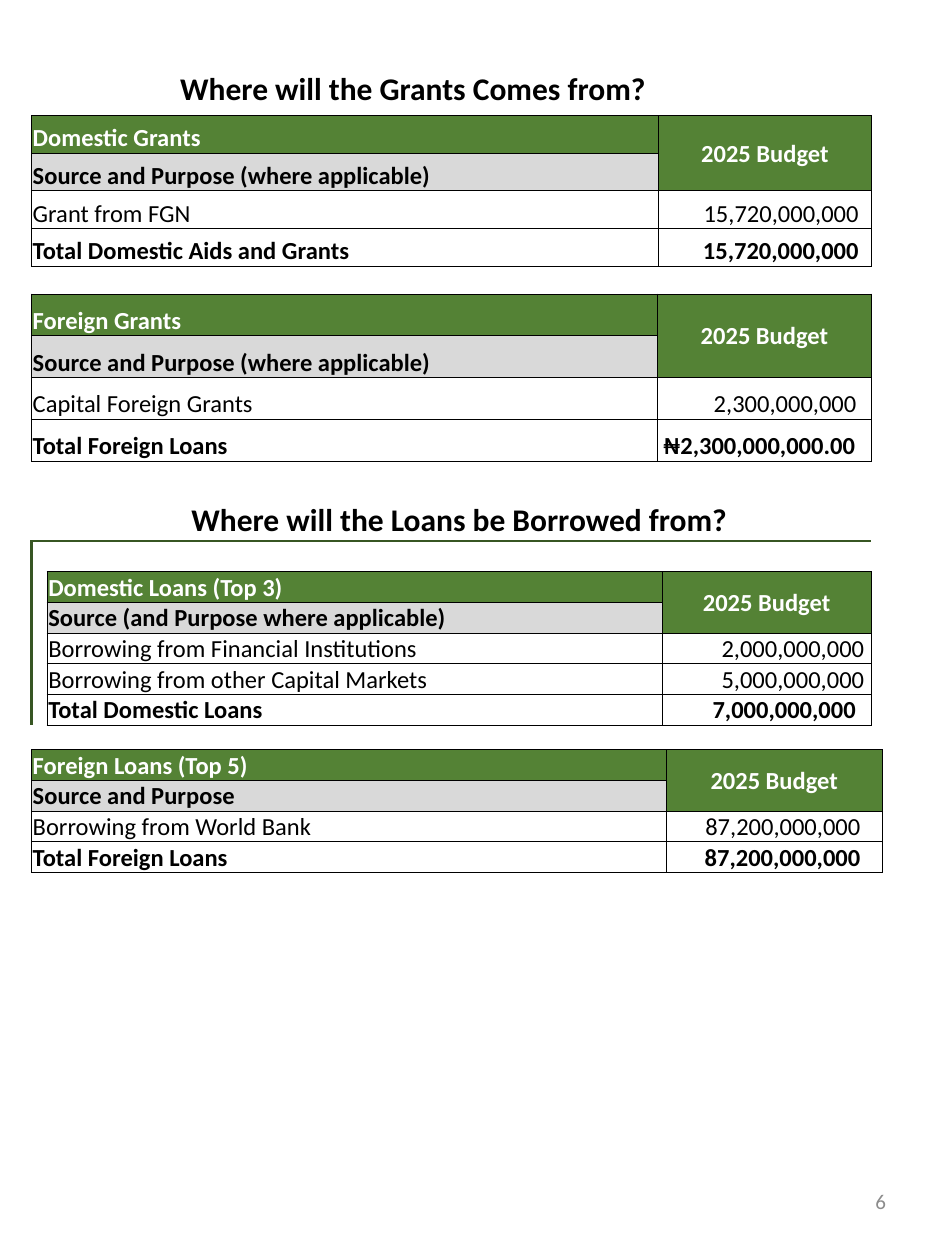
"""Build the budget slide listing grant and loan sources."""
from lxml import etree
from pptx import Presentation
from pptx.dml.color import RGBColor
from pptx.enum import text as t
from pptx.oxml import ns
from pptx.util import Pt

GREEN = RGBColor(0x54, 0x82, 0x35)
DARK_GREEN = RGBColor(0x37, 0x56, 0x23)
GREY = RGBColor(0xD9, 0xD9, 0xD9)
PAGE_GREY = RGBColor(0x8C, 0x8C, 0x8C)
BLACK = RGBColor(0, 0, 0)
WHITE = RGBColor(255, 255, 255)

LEFT = 18
INSET = 0.72
BUDGET = "2025 Budget"
THIN = (BLACK, 0.5)
FRAME = (DARK_GREEN, 1.5)

GRANTS_HEADING = ("Where will the Grants Comes from?", 95.76, 36, 283, 28.8)
LOANS_HEADING = ("Where will the Loans be Borrowed from?", 102.24, 282.24, 323.3, 28.8)
PAGE_NUMBER = ("6", 387.4, 667.4, 126, 38.2)

# Each row holds a label, an amount and the amount's right inset.
TABLES = [
    dict(top=66, height=86.2, widths=(358.3, 121.7), framed=False,
         group="Domestic Grants", source="Source and Purpose (where applicable)",
         rows=[("Grant from FGN", "15,720,000,000", 7.2),
               ("Total Domestic Aids and Grants", "15,720,000,000", 7.2)]),
    dict(top=168, height=95.6, widths=(357.8, 122.2), framed=False,
         group="Foreign Grants", source="Source and Purpose (where applicable)",
         rows=[("Capital Foreign Grants", "2,300,000,000", 8.5),
               ("Total Foreign Loans", "₦2,300,000,000.00", 9.2)]),
    dict(top=309.3, height=104.4, widths=(8.9, 351.4, 119.7), framed=True,
         group="Domestic Loans (Top 3)", source="Source (and Purpose where applicable)",
         rows=[("Borrowing from Financial Institutions", "2,000,000,000", 4),
               ("Borrowing from other Capital Markets", "5,000,000,000", 4),
               ("Total Domestic Loans", "7,000,000,000", 8.8)]),
    dict(top=428.4, height=69.8, widths=(363, 123), framed=False,
         group="Foreign Loans (Top 5)", source="Source and Purpose",
         rows=[("Borrowing from World Bank", "87,200,000,000", 12.2),
               ("Total Foreign Loans", "87,200,000,000", 12.2)]),
]


def write(frame, words, size=14, bold=False, color=BLACK, align=t.PP_ALIGN.LEFT):
    paragraph = frame.paragraphs[0]
    paragraph.alignment = align
    run = paragraph.add_run()
    run.text = words
    run.font.name = "Calibri"
    run.font.size = Pt(size)
    run.font.bold = bold
    run.font.color.rgb = color


def write_heading(box, heading):
    words, *place = heading
    box.left, box.top, box.width, box.height = map(Pt, place)
    frame = box.text_frame
    frame.word_wrap = False
    frame.auto_size = t.MSO_AUTO_SIZE.SHAPE_TO_FIT_TEXT
    frame.vertical_anchor = t.MSO_ANCHOR.TOP
    write(frame, words, size=18, bold=True)


def set_borders(cell, **borders):
    properties = cell._tc.get_or_add_tcPr()
    for index, side in enumerate("LRTB"):
        line = etree.Element(ns.qn(f"a:ln{side}"))
        if borders.get(side):
            color, width = borders[side]
            line.set("w", str(Pt(width)))
            fill = etree.SubElement(line, ns.qn("a:solidFill"))
            etree.SubElement(fill, ns.qn("a:srgbClr"), val=str(color))
        else:
            etree.SubElement(line, ns.qn("a:noFill"))
        properties.insert(index, line)


def prepare_cell(cell):
    cell.margin_left = cell.margin_right = cell.margin_top = Pt(INSET)
    cell.margin_bottom = 0
    cell.vertical_anchor = t.MSO_ANCHOR.BOTTOM
    cell.fill.background()
    cell.text_frame.paragraphs[0]._p.get_or_add_endParaRPr().set("sz", "1000")


def paint(cell, color):
    cell.fill.solid()
    cell.fill.fore_color.rgb = color


def add_budget_table(slide, top, height, widths, framed, group, source, rows):
    edge = int(framed)
    count = len(rows) + 2 + edge
    table = slide.shapes.add_table(count, len(widths), Pt(LEFT), Pt(top),
                                   Pt(sum(widths)), Pt(height)).table
    table.first_row = table.horz_banding = False
    for column, width in zip(table.columns, widths):
        column.width = Pt(width)
    for row in table.rows:
        row.height = Pt(height / count)
    for r in range(count):
        for c in range(len(widths)):
            cell = table.cell(r, c)
            prepare_cell(cell)
            if r >= edge and c >= edge:
                set_borders(cell, L=THIN, R=THIN, T=THIN, B=THIN)
            else:
                set_borders(cell, L=FRAME if c == 0 else None,
                            T=FRAME if r == 0 else None,
                            R=THIN if r > 0 else None,
                            B=THIN if c > 0 else None)

    group_cell, source_cell = table.cell(edge, edge), table.cell(edge + 1, edge)
    budget_cell = table.cell(edge, edge + 1)
    budget_cell.merge(table.cell(edge + 1, edge + 1))
    budget_cell.vertical_anchor = t.MSO_ANCHOR.MIDDLE
    paint(group_cell, GREEN)
    paint(source_cell, GREY)
    paint(budget_cell, GREEN)
    write(group_cell.text_frame, group, bold=True, color=WHITE)
    write(source_cell.text_frame, source, bold=True)
    write(budget_cell.text_frame, BUDGET, bold=True, color=WHITE, align=t.PP_ALIGN.CENTER)

    for r, (label, amount, inset) in enumerate(rows, edge + 2):
        total = r == count - 1
        amount_cell = table.cell(r, edge + 1)
        amount_cell.margin_right = Pt(inset)
        write(table.cell(r, edge).text_frame, label, bold=total)
        write(amount_cell.text_frame, amount, bold=total, align=t.PP_ALIGN.RIGHT)


def main():
    deck = Presentation()
    deck.slide_width, deck.slide_height = Pt(540), Pt(720)
    slide = deck.slides.add_slide(deck.slide_layouts[5])
    write_heading(slide.shapes.title, GRANTS_HEADING)
    write_heading(slide.shapes.add_textbox(0, 0, 0, 0), LOANS_HEADING)
    for budget in TABLES:
        add_budget_table(slide, **budget)
    words, *place = PAGE_NUMBER
    page = slide.shapes.add_textbox(*map(Pt, place)).text_frame
    page.word_wrap = True
    page.vertical_anchor = t.MSO_ANCHOR.MIDDLE
    write(page, words, size=12, color=PAGE_GREY, align=t.PP_ALIGN.RIGHT)
    deck.save("out.pptx")


if __name__ == "__main__":
    main()
